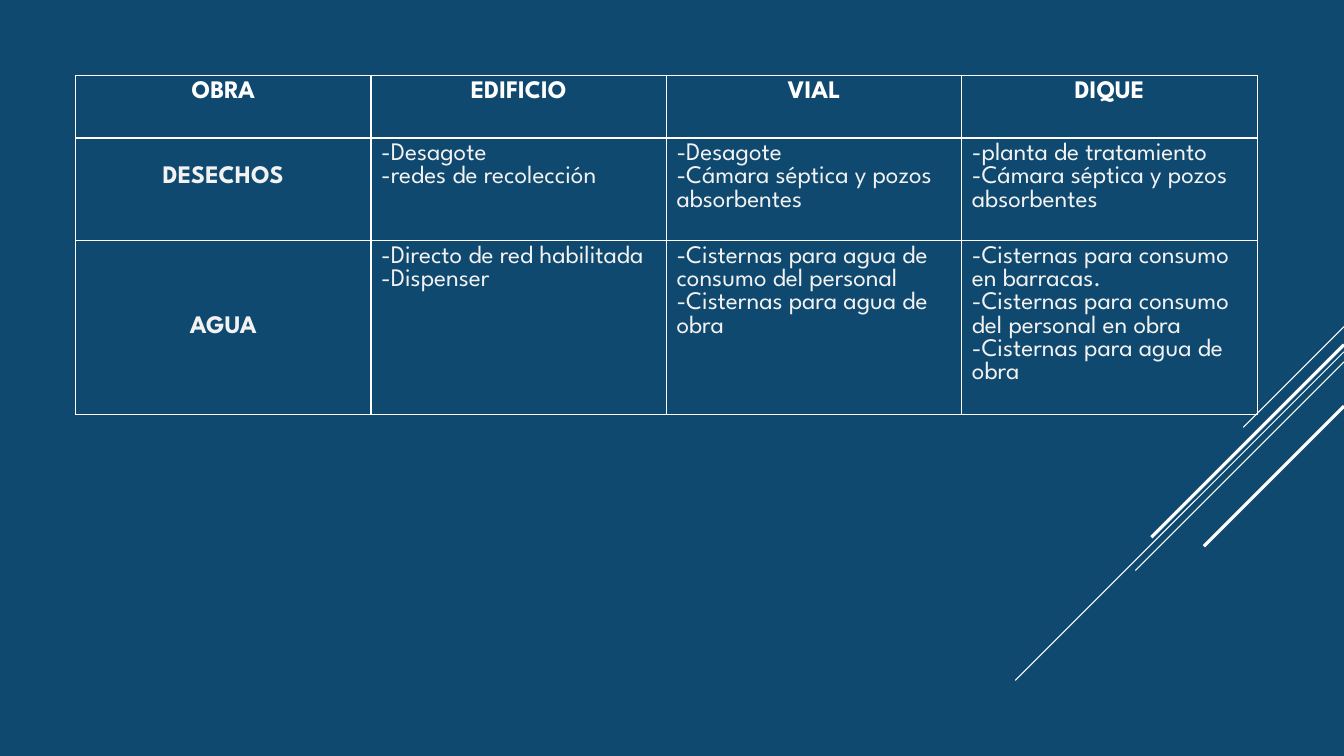
from lxml import etree
from pptx import Presentation
from pptx.dml.color import RGBColor
from pptx.enum import shapes, text
from pptx.oxml.ns import qn
from pptx.util import Inches, Pt

COLORS = {"background": "0F496F", "line": "FFFFFF", "header": "FFFFFF", "body": "F2F2F2"}
FONT = "League Spartan"
FONT_SIZE = 18
LINE_HEIGHT = 0.23
CELL_MARGIN = 0.05

HEADERS = ["OBRA", "EDIFICIO", "VIAL", "DIQUE"]
# Label, text lines the label sits below the top, then one list per kind of work
WORKS = [
    ("DESECHOS", 1, [
        ["-Desagote", "-redes de recolección"],
        ["-Desagote", "-Cámara séptica y pozos absorbentes"],
        ["-planta de tratamiento", "-Cámara séptica y pozos absorbentes"],
    ]),
    ("AGUA", 3, [
        ["-Directo de red habilitada", "-Dispenser"],
        ["-Cisternas para agua de consumo del personal", "-Cisternas para agua de obra"],
        ["-Cisternas para consumo en barracas.",
         "-Cisternas para consumo del personal en obra",
         "-Cisternas para agua de obra"],
    ]),
]
TABLE_LEFT = TABLE_TOP = 0.75
COLUMN_WIDTH = 2.93
ROW_HEIGHTS = [0.62, 1.02, 1.72]

SLIDE_WIDTH, SLIDE_HEIGHT = 13.33, 7.5
# Start height on the right edge, run to the lower left at 45 degrees, line width
DIAGONALS = [(3.24, 1.0, 0.75), (3.49, 3.26, 0.75), (3.59, 2.07, 0.75),
             (3.42, 1.91, 2.25), (4.03, 1.39, 2.25)]


def color(name):
    return RGBColor.from_string(COLORS[name])


def add_diagonal(slide, top, run, width):
    line = slide.shapes.add_connector(
        shapes.MSO_CONNECTOR.STRAIGHT, Inches(SLIDE_WIDTH), Inches(top),
        Inches(SLIDE_WIDTH - run), Inches(top + run))
    line.line.color.rgb = color("line")
    line.line.width = Pt(width)
    etree.SubElement(line._element.spPr, qn("a:effectLst"))


def add_borders(cell):
    tc_pr = cell._tc.get_or_add_tcPr()
    for side in ("lnL", "lnR", "lnT", "lnB"):
        ln = etree.SubElement(tc_pr, qn(f"a:{side}"), w=str(Pt(1)))
        fill = etree.SubElement(ln, qn("a:solidFill"))
        etree.SubElement(fill, qn("a:srgbClr"), val=COLORS["line"])


def fill_cell(cell, lines, color_name="body", label=False, lines_down=0):
    add_borders(cell)
    cell.fill.background()
    cell.margin_top = Inches(CELL_MARGIN + lines_down * LINE_HEIGHT)
    tf = cell.text_frame
    tf.text = "\n".join(lines)
    for p in tf.paragraphs:
        p.alignment = text.PP_ALIGN.CENTER if label else text.PP_ALIGN.LEFT
        for r in p.runs:
            r.font.name = FONT
            r.font.size = Pt(FONT_SIZE)
            r.font.bold = label
            r.font.color.rgb = color(color_name)


def add_works_table(slide):
    table = slide.shapes.add_table(
        len(ROW_HEIGHTS), len(HEADERS), Inches(TABLE_LEFT), Inches(TABLE_TOP),
        Inches(COLUMN_WIDTH * len(HEADERS)), Inches(sum(ROW_HEIGHTS))).table
    for column in table.columns:
        column.width = Inches(COLUMN_WIDTH)
    for row, height in zip(table.rows, ROW_HEIGHTS):
        row.height = Inches(height)
    for col, header in enumerate(HEADERS):
        fill_cell(table.cell(0, col), [header], "header", label=True)
    for row, (name, lines_down, entries) in enumerate(WORKS, 1):
        fill_cell(table.cell(row, 0), [name], label=True, lines_down=lines_down)
        for col, lines in enumerate(entries, 1):
            fill_cell(table.cell(row, col), lines)


def main():
    prs = Presentation()
    prs.slide_width, prs.slide_height = Inches(SLIDE_WIDTH), Inches(SLIDE_HEIGHT)
    slide = prs.slides.add_slide(prs.slide_layouts[6])
    slide.background.fill.solid()
    slide.background.fill.fore_color.rgb = color("background")
    for diagonal in DIAGONALS:
        add_diagonal(slide, *diagonal)
    add_works_table(slide)
    prs.save("out.pptx")


if __name__ == "__main__":
    main()
